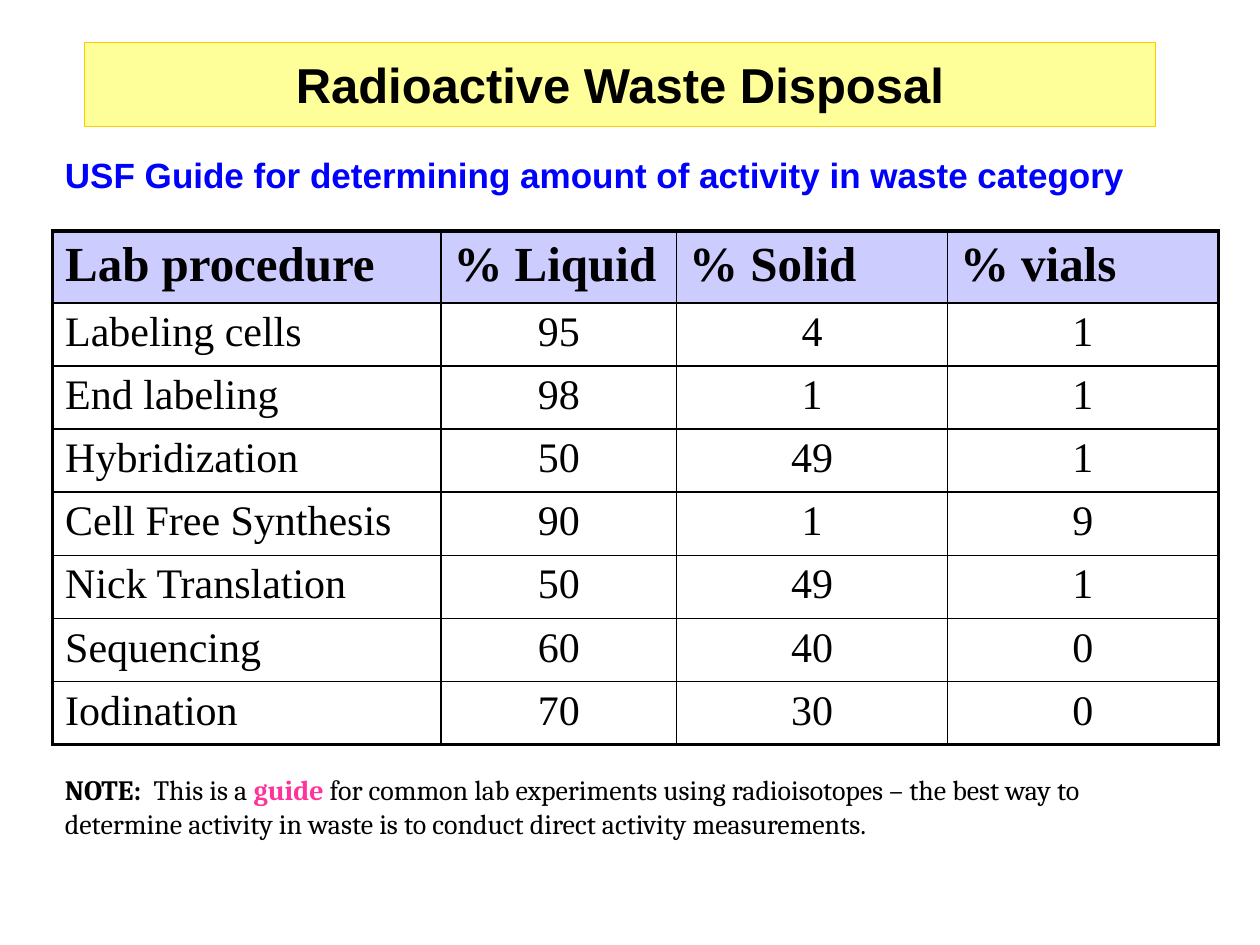
from lxml import etree
from pptx import Presentation
from pptx.dml.color import RGBColor
from pptx.enum.text import MSO_ANCHOR, MSO_AUTO_SIZE, PP_ALIGN
from pptx.oxml.ns import qn
from pptx.util import Cm, Pt

LEFT, CENTER = PP_ALIGN.LEFT, PP_ALIGN.CENTER
MIDDLE = MSO_ANCHOR.MIDDLE
NO_FIT, GROW = MSO_AUTO_SIZE.NONE, MSO_AUTO_SIZE.SHAPE_TO_FIT_TEXT
BLACK = RGBColor(0x00, 0x00, 0x00)
BLUE = RGBColor(0x00, 0x00, 0xFF)
PINK = RGBColor(0xFF, 0x33, 0x99)
YELLOW = RGBColor(0xFF, 0xFF, 0x99)
GOLD = RGBColor(0xFF, 0xCC, 0x00)
LAVENDER = RGBColor(0xCC, 0xCC, 0xFF)


def add_text(p, text, font="Arial", size=20, color=BLACK, bold=False, align=LEFT):
    p.alignment = align
    p.space_before = Pt(0)
    r = p.add_run()
    r.text = text
    r.font.name = font
    r.font.size = Pt(size)
    r.font.bold = bold
    r.font.color.rgb = color


def add_border(cell, side, width):
    ln = etree.SubElement(cell._tc.get_or_add_tcPr(), qn(f"a:ln{side}"), w=str(Pt(width)))
    fill = etree.SubElement(ln, qn("a:solidFill"))
    etree.SubElement(fill, qn("a:srgbClr"), val=str(BLACK))


prs = Presentation()
prs.slide_width, prs.slide_height = Cm(25.4), Cm(19.05)
s = prs.slides.add_slide(prs.slide_layouts[5])

title = s.shapes.title
title.left, title.top, title.width, title.height = Cm(1.7), Cm(0.85), Cm(21.59), Cm(1.7)
title.fill.solid()
title.fill.fore_color.rgb = YELLOW
title.line.color.rgb = GOLD
title.line.width = Pt(0.75)
tf = title.text_frame
tf.auto_size = NO_FIT
tf.vertical_anchor = MIDDLE
add_text(tf.paragraphs[0], "Radioactive Waste Disposal", size=28, bold=True, align=CENTER)

sp = s.shapes.add_textbox(Cm(1.06), Cm(2.96), Cm(22.43), Cm(1.1))
tf = sp.text_frame
tf.word_wrap = True
tf.auto_size = GROW
add_text(tf.paragraphs[0], "USF Guide for determining amount of activity in waste category",
         color=BLUE, bold=True)

rows = [
    ("Lab procedure", "% Liquid", "% Solid", "% vials"),
    ("Labeling cells", "95", "4", "1"),
    ("End labeling", "98", "1", "1"),
    ("Hybridization", "50", "49", "1"),
    ("Cell Free Synthesis", "90", "1", "9"),
    ("Nick Translation", "50", "49", "1"),
    ("Sequencing", "60", "40", "0"),
    ("Iodination", "70", "30", "0"),
]
col_widths = [7.83, 4.75, 5.46, 5.46]
last_row, last_col = len(rows) - 1, len(col_widths) - 1
table = s.shapes.add_table(len(rows), len(col_widths), Cm(1.06), Cm(4.66),
                           Cm(23.5), Cm(10.34)).table
table.horz_banding = False
for col, width in zip(table.columns, col_widths):
    col.width = Cm(width)
for i, values in enumerate(rows):
    header = i == 0
    table.rows[i].height = Cm(1.45 if header else 1.27)
    for j, text in enumerate(values):
        cell = table.cell(i, j)
        outer = {"L": j == 0, "R": j == last_col, "T": header, "B": i == last_row}
        for side, is_outer in outer.items():
            add_border(cell, side, 2.25 if is_outer else 1)
        if header:
            cell.fill.solid()
            cell.fill.fore_color.rgb = LAVENDER
        else:
            cell.fill.background()
        add_text(cell.text_frame.paragraphs[0], text, font="Times New Roman",
                 size=28 if header else 24, bold=header,
                 align=LEFT if header or j == 0 else CENTER)

sp = s.shapes.add_textbox(Cm(1.06), Cm(15.45), Cm(21.59), Cm(2.29))
tf = sp.text_frame
tf.word_wrap = True
tf.auto_size = GROW
note = [
    ("NOTE:", BLACK, True),
    ("  This is a ", BLACK, False),
    ("guide", PINK, True),
    (" for common lab experiments using radioisotopes – the best way to determine "
     "activity in waste is to conduct direct activity measurements.", BLACK, False),
]
for text, color, bold in note:
    add_text(tf.paragraphs[0], text, font="Cambria", size=16, color=color, bold=bold)

prs.save("out.pptx")
